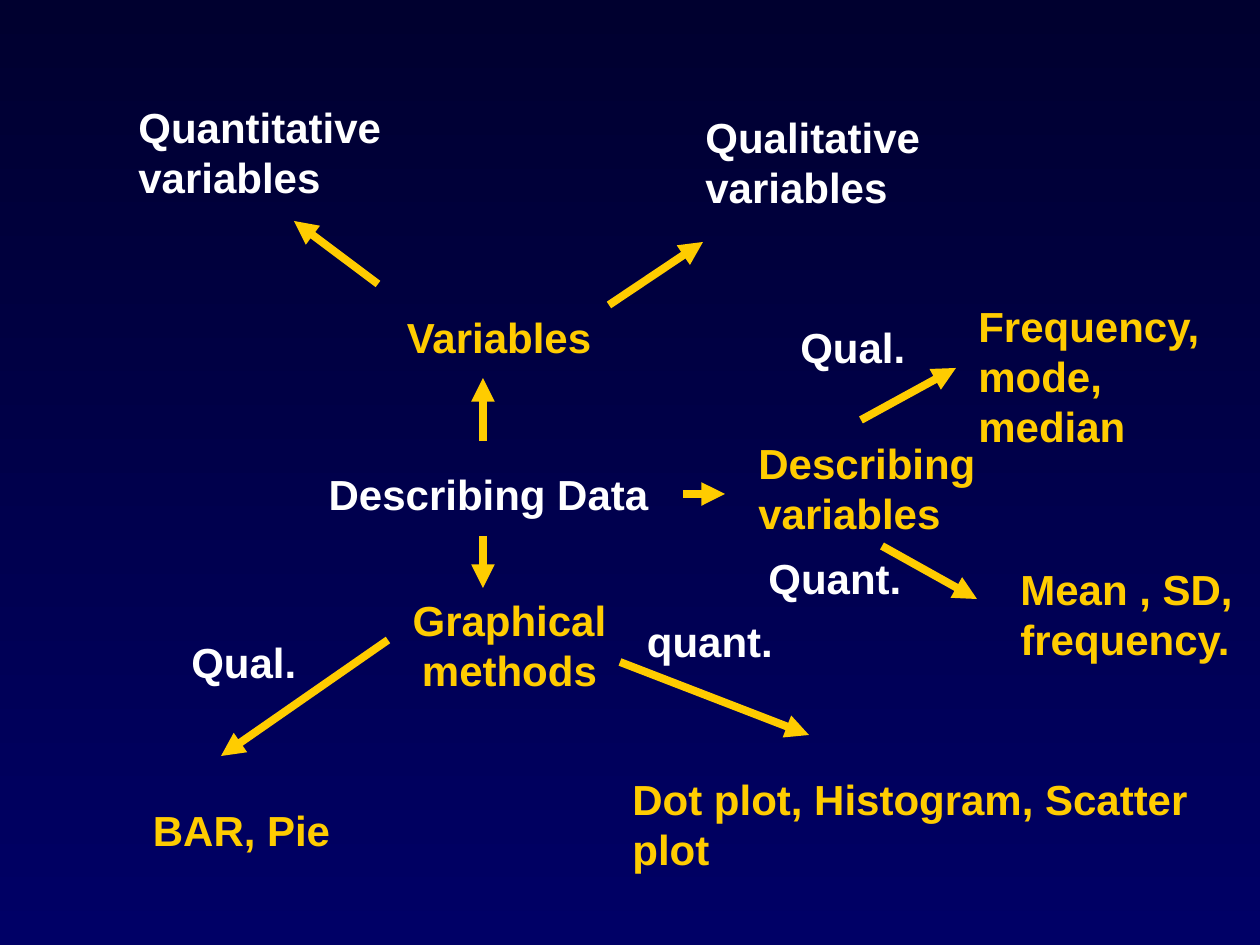
from dataclasses import dataclass

import pptx
import pptx.util
from lxml import etree
from pptx.dml.color import RGBColor
from pptx.enum.shapes import MSO_CONNECTOR
from pptx.enum.text import MSO_AUTO_SIZE, PP_ALIGN
from pptx.oxml.ns import qn

EMU_PER_PX = 914400 / 126


def px(length):
    return pptx.util.Emu(round(length * EMU_PER_PX))


@dataclass(frozen=True)
class Theme:
    white: RGBColor = RGBColor(0xFF, 0xFF, 0xFF)
    gold: RGBColor = RGBColor(0xFF, 0xCC, 0x00)
    night: RGBColor = RGBColor(0x00, 0x00, 0x2F)
    navy: RGBColor = RGBColor(0x00, 0x00, 0x66)
    font: str = "Arial"
    text_size: float = 24
    line_width: float = 4.5
    line_height: int = 50
    padding: int = 13


class ConceptMap:
    def __init__(self, slide, theme):
        self.slide = slide
        self.theme = theme

    def background(self):
        fill = self.slide.background.fill
        fill.gradient()
        fill.gradient_angle = 270
        colors = (self.theme.night, self.theme.navy)
        for stop, color, position in zip(fill.gradient_stops, colors, (0, 1)):
            stop.color.rgb = color
            stop.position = position

    def label(self, text, left, top, width, color, lines=1, centered=False, indent=0):
        height = self.theme.padding + lines * self.theme.line_height
        box = self.slide.shapes.add_textbox(px(left), px(top), px(width), px(height))
        frame = box.text_frame
        frame.word_wrap = True
        frame.auto_size = MSO_AUTO_SIZE.SHAPE_TO_FIT_TEXT
        if indent:
            frame.margin_left = px(indent)
        para = frame.paragraphs[0]
        para.text = text
        para.alignment = PP_ALIGN.CENTER if centered else PP_ALIGN.LEFT
        para.font.name = self.theme.font
        para.font.size = pptx.util.Pt(self.theme.text_size)
        para.font.bold = True
        para.font.color.rgb = color

    def arrow(self, start, end):
        connector = self.slide.shapes.add_connector(
            MSO_CONNECTOR.STRAIGHT, *map(px, start + end))
        connector.line.color.rgb = self.theme.gold
        connector.line.width = pptx.util.Pt(self.theme.line_width)
        outline = connector.line._get_or_add_ln()
        etree.SubElement(outline, qn("a:tailEnd"), type="triangle")
        etree.SubElement(outline.getparent(), qn("a:effectLst"))


def main():
    deck = pptx.Presentation()
    deck.slide_width, deck.slide_height = px(1260), px(945)
    theme = Theme()
    page = ConceptMap(deck.slides.add_slide(deck.slide_layouts[6]), theme)
    page.background()

    # Centre and its three branches
    page.label("Describing Data", 315, 462, 347, theme.white, centered=True)
    page.label("Variables", 357, 305, 284, theme.gold, centered=True)
    page.label("Describing variables", 746, 431, 294, theme.gold, lines=2)
    page.label("Graphical methods", 357, 588, 305, theme.gold, lines=2, centered=True)

    # Outcomes of each branch
    page.label("Quantitative variables", 126, 95, 273, theme.white, lines=2)
    page.label("Qualitative variables", 693, 105, 336, theme.white, lines=2)
    page.label("Frequency, mode, median", 966, 294, 252, theme.gold, lines=3)
    page.label("Mean , SD, frequency.", 1008, 557, 252, theme.gold, lines=2)
    page.label("BAR, Pie", 0, 798, 483, theme.gold, centered=True)
    page.label("Dot plot, Histogram, Scatter plot", 620, 767, 599, theme.gold, lines=2)

    # Captions beside the arrows
    page.label("Qual.", 179, 630, 189, theme.white)
    page.label("quant.", 588, 609, 242, theme.white, indent=59)
    page.label("Qual.", 788, 315, 137, theme.white)
    page.label("Quant.", 756, 546, 168, theme.white)

    arrows = [
        ((483, 441), (483, 378)),
        ((609, 305), (703, 242)),
        ((378, 284), (294, 221)),
        ((483, 536), (483, 588)),
        ((388, 640), (221, 756)),
        ((620, 662), (809, 735)),
        ((683, 494), (725, 494)),
        ((861, 420), (956, 368)),
        ((882, 546), (977, 599)),
    ]
    for start, end in arrows:
        page.arrow(start, end)

    deck.save("out.pptx")


if __name__ == "__main__":
    main()
